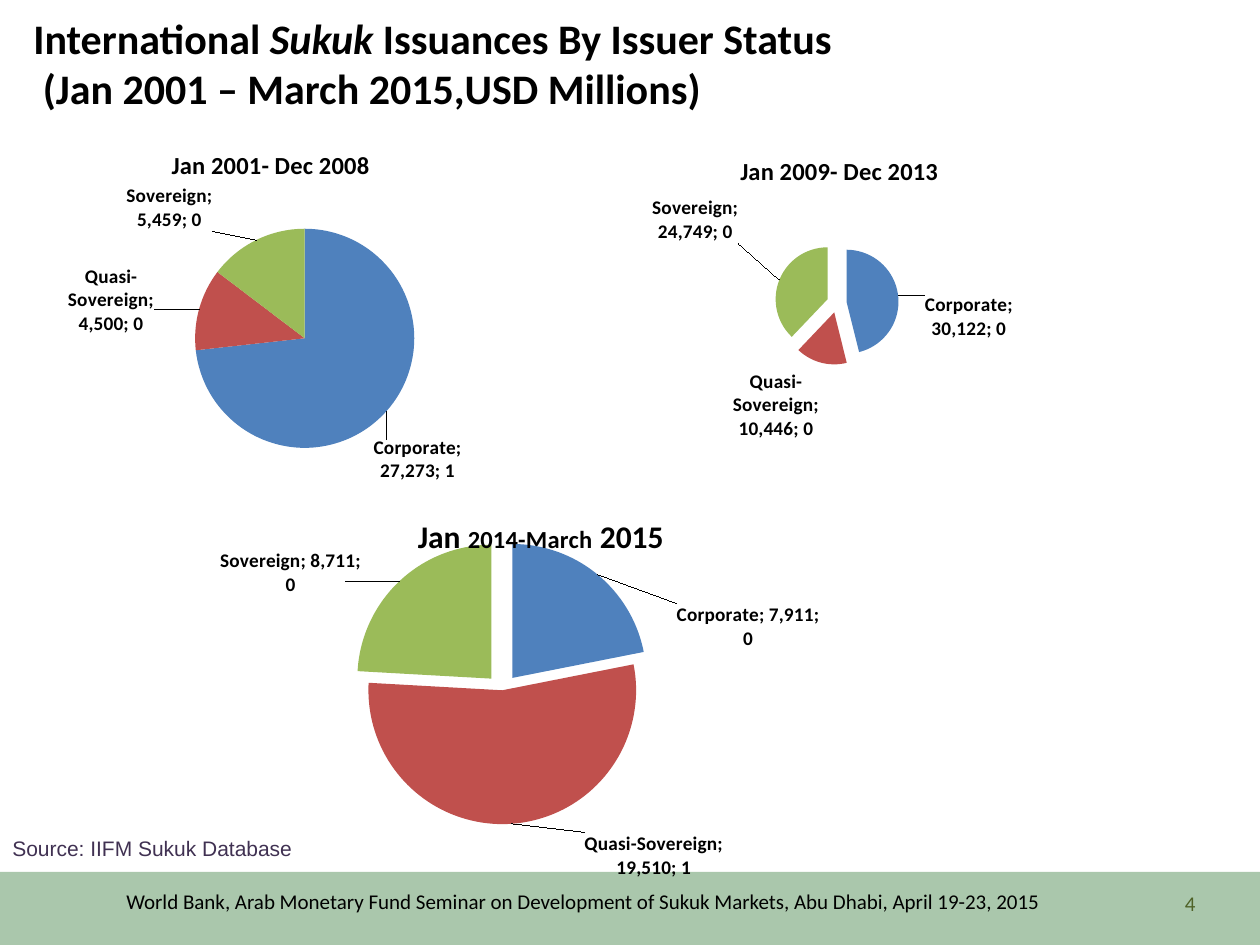
"""Build the slide of international sukuk issuances by issuer status."""
from lxml.etree import SubElement
from pptx import Presentation
from pptx.chart.data import CategoryChartData
from pptx.dml.color import RGBColor
from pptx.enum.chart import XL_CHART_TYPE, XL_LABEL_POSITION
from pptx.enum.shapes import MSO_SHAPE
from pptx.enum.text import MSO_ANCHOR, PP_ALIGN
from pptx.oxml import parse_xml
from pptx.oxml.ns import nsdecls, qn
from pptx.util import Pt

PX = 914400 // 126
COLORS = {
    "text": "000000", "band": "72A376", "number": "4F6228", "source": "403152",
    "Corporate": "4F81BD", "Quasi-Sovereign": "C0504D", "Sovereign": "9BBB59",
}
ISSUERS = ["Corporate", "Quasi-Sovereign", "Sovereign"]
HEADING = [
    [("International ", False), ("Sukuk ", True), ("Issuances By Issuer Status", False)],
    [(" (Jan 2001 – March 2015,USD Millions)", False)],
]
FOOTER = ("World Bank, Arab Monetary Fund Seminar on Development of Sukuk Markets, "
          "Abu Dhabi, April 19-23, 2015")
PERIODS = [
    dict(box=(21, 126, 609, 357), title=[("Jan 2001- Dec 2008", 14)], title_at=(0.24, 0.05),
         plot=(0.237, 0.288, 0.458, 0.614), values=[27273, 4500, 5459], explode=[0, 0, 0],
         offsets=[(-0.03, 0.065), (-0.062, 0.08), (-0.066, -0.006)]),
    dict(box=(577, 136, 525, 336), title=[("Jan 2009- Dec 2013", 14)], title_at=None,
         plot=(0.396, 0.342, 0.198, 0.31), values=[30122, 10446, 24749], explode=[19, 19, 19],
         offsets=[(0.037, 0.137), None, (-0.065, -0.1)]),
    dict(box=(220, 504, 746, 378), title=[("Jan ", 18), ("2014-March", 14), (" 2015", 18)],
         title_at=(0.26, 0.02), plot=(0.199, 0.095, 0.359, 0.796),
         values=[7911, 19510, 8711], explode=[12, 0, 12],
         offsets=[(0.1, 0.217), (0.19, 0.003), (-0.065, 0.055)]),
]


def emu(box):
    return [length * PX for length in box]


def color(name):
    return RGBColor.from_string(COLORS[name])


def style(font, size, name="text", bold=False, italic=False, face="Calibri"):
    font.size, font.bold, font.italic, font.name = Pt(size), bold, italic, face
    font.color.rgb = color(name)


def add_text(slide, box, lines, size=12, align=PP_ALIGN.LEFT, anchor=MSO_ANCHOR.TOP,
             name="text", bold=False, face="Calibri"):
    frame = slide.shapes.add_textbox(*emu(box)).text_frame
    frame.word_wrap = True
    frame.vertical_anchor = anchor
    for index, line in enumerate(lines):
        paragraph = frame.paragraphs[0] if index == 0 else frame.add_paragraph()
        paragraph.alignment = align
        for words, italic in line:
            run = paragraph.add_run()
            run.text = words
            style(run.font, size, name, bold, italic, face)


def layout(extra="", **fractions):
    parts = "".join(f'<c:{key} val="{value}"/>' for key, value in fractions.items())
    return parse_xml(f'<c:layout {nsdecls("c")}><c:manualLayout>{extra}{parts}'
                     '</c:manualLayout></c:layout>')


def edge_layout(extra="", **fractions):
    return layout(extra + '<c:xMode val="edge"/><c:yMode val="edge"/>', **fractions)


def add_title(chart, runs, place):
    chart.has_title = True
    paragraph = chart.chart_title.text_frame.paragraphs[0]
    for words, size in runs:
        run = paragraph.add_run()
        run.text = words
        style(run.font, size, bold=True)
    if place:
        title = chart.chart_title._element
        for old in title.findall(qn("c:layout")):
            title.remove(old)
        title.find(qn("c:tx")).addnext(edge_layout(x=place[0], y=place[1]))


def place_plot(chart, plot):
    area = chart._chartSpace.chart.plotArea
    for old in area.findall(qn("c:layout")):
        area.remove(old)
    x, y, w, h = plot
    area.insert(0, edge_layout('<c:layoutTarget val="inner"/>', x=x, y=y, w=w, h=h))


def label_slice(point, offset):
    label = point.data_label
    style(label.font, 11, bold=True)
    label.position = XL_LABEL_POSITION.OUTSIDE_END
    element = label._dLbl
    for tag in ("c:showVal", "c:showCatName", "c:showPercent"):
        element.find(qn(tag)).set("val", "1")
    index = element.find(qn("c:idx"))
    index.addnext(parse_xml(f'<c:numFmt {nsdecls("c")} formatCode="#,##0" sourceLinked="0"/>'))
    if offset:
        index.addnext(layout(x=offset[0], y=offset[1]))


def add_pie(slide, period):
    data = CategoryChartData(number_format="#,##0")
    data.categories = ISSUERS
    data.add_series("Series 1", period["values"])
    chart = slide.shapes.add_chart(XL_CHART_TYPE.PIE, *emu(period["box"]), data).chart
    chart.has_legend = False
    style(chart.font, 10)
    add_title(chart, period["title"], period["title_at"])
    place_plot(chart, period["plot"])
    pie = chart.plots[0]
    pie.vary_by_categories = True
    series = pie.series[0]
    labels = series.data_labels
    labels.show_value = labels.show_category_name = labels.show_percentage = True
    labels.number_format, labels.number_format_is_linked = "#,##0", False
    labels.position = XL_LABEL_POSITION.OUTSIDE_END
    style(labels.font, 11, bold=True)
    for index, issuer in enumerate(ISSUERS):
        point = series.points[index]
        point.format.fill.solid()
        point.format.fill.fore_color.rgb = color(issuer)
        label_slice(point, period["offsets"][index])
    for part, explosion in zip(series._element.findall(qn("c:dPt")), period["explode"]):
        part.find(qn("c:idx")).addnext(
            parse_xml(f'<c:explosion {nsdecls("c")} val="{explosion}"/>'))


def add_band(slide):
    band = slide.shapes.add_shape(MSO_SHAPE.RECTANGLE, *emu((0, 872, 1260, 73)))
    band.shadow.inherit = False
    band.line.fill.background()
    band.fill.solid()
    band.fill.fore_color.rgb = color("band")
    tint = band._element.spPr.find(qn("a:solidFill"))[0]
    SubElement(tint, qn("a:alpha"), val="60000")


def main():
    deck = Presentation()
    deck.slide_width, deck.slide_height = emu((1260, 945))
    slide = deck.slides.add_slide(deck.slide_layouts[6])
    add_band(slide)
    add_text(slide, (21, 0, 882, 126), HEADING, size=24, bold=True, anchor=MSO_ANCHOR.MIDDLE)
    add_text(slide, (1061, 882, 147, 42), [[("4", False)]], name="number",
             align=PP_ALIGN.RIGHT, anchor=MSO_ANCHOR.MIDDLE)
    for period in PERIODS:
        add_pie(slide, period)
    add_text(slide, (53, 882, 1061, 42), [[(FOOTER, False)]], align=PP_ALIGN.CENTER)
    add_text(slide, (0, 829, 441, 38), [[("Source: IIFM Sukuk Database", False)]],
             name="source", face="Arial")
    deck.save("out.pptx")


if __name__ == "__main__":
    main()
